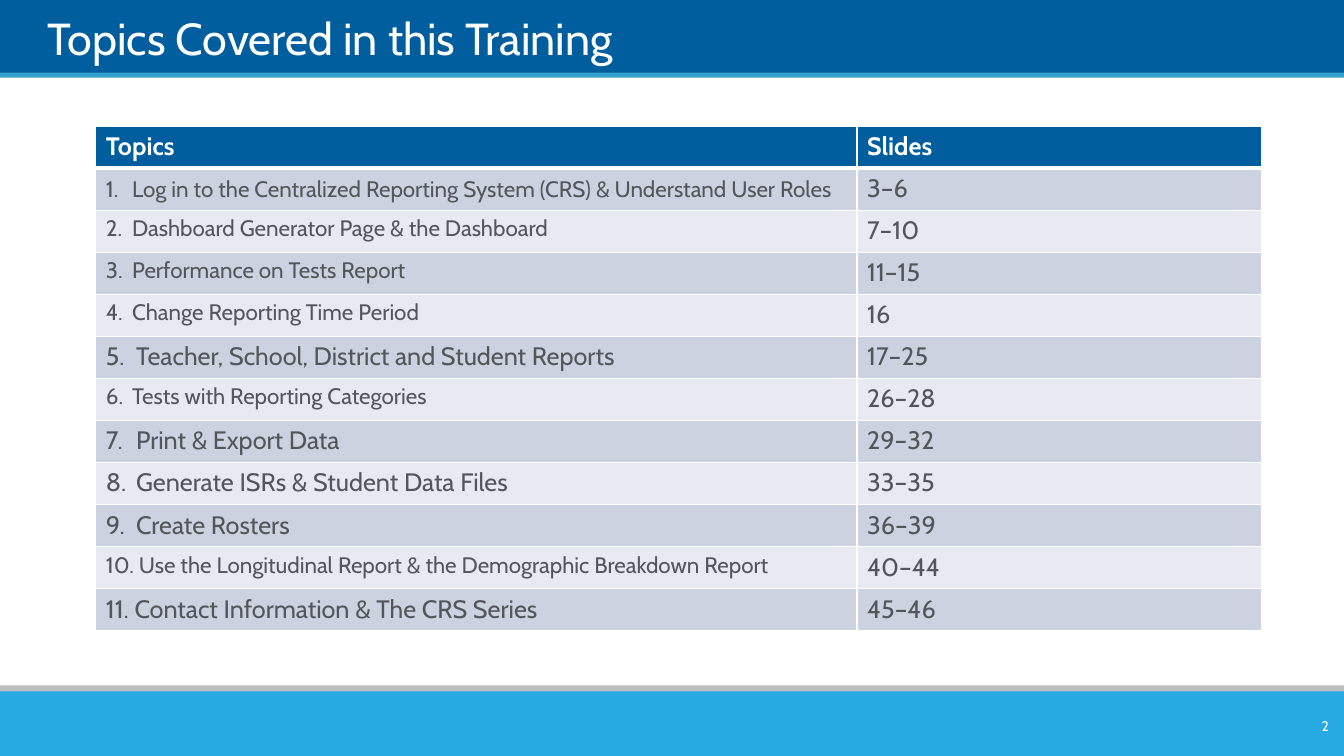
from lxml import etree
from pptx import Presentation
from pptx import util as u
from pptx.dml.color import RGBColor
from pptx.enum import shapes, text
from pptx.oxml import ns

W, H = 13.33, 7.5
FONT = "Cabin"
COLORS = {
    "navy": "005E9E", "stripe": "35A0CE", "grey": "BFBFBF", "sky": "27AAE1",
    "white": "FFFFFF", "ink": "53565A", "odd": "CCD2DF", "even": "E7EAF0",
}
TOPICS = [
    ("Log in to the Centralized Reporting System (CRS) & Understand User Roles", 16, "3–6"),
    ("Dashboard Generator Page & the Dashboard", 16, "7–10"),
    ("Performance on Tests Report", 16, "11–15"),
    ("Change Reporting Time Period", 16, "16"),
    ("Teacher, School, District and Student Reports", 18, "17–25"),
    ("Tests with Reporting Categories", 16, "26–28"),
    ("Print & Export Data", 18, "29–32"),
    ("Generate ISRs & Student Data Files", 18, "33–35"),
    ("Create Rosters", 18, "36–39"),
    ("Use the Longitudinal Report & the Demographic Breakdown Report", 16, "40–44"),
    ("Contact Information & The CRS Series", 18, "45–46"),
]


def rgb(name):
    return RGBColor.from_string(COLORS[name])


def add_run(p, words, size, color, bold=False):
    r = p.add_run()
    r.text = words
    r.font.name = FONT
    r.font.size = u.Pt(size)
    r.font.bold = bold
    r.font.color.rgb = rgb(color)


def add_bar(s, y, h, color):
    sp = s.shapes.add_shape(shapes.MSO_SHAPE.RECTANGLE, 0, u.Inches(y), u.Inches(W), u.Inches(h))
    sp.shadow.inherit = False
    sp.fill.solid()
    sp.fill.fore_color.rgb = rgb(color)
    sp.line.fill.background()


def add_header(s, y, h, title):
    stripe = 0.05
    add_bar(s, y, h - stripe / 2, "navy")
    add_bar(s, y + h - stripe, stripe, "stripe")
    sp = s.shapes.title
    sp.element.getparent().append(sp.element)
    sp.left, sp.top = u.Inches(0.47), u.Inches(y + 0.08)
    sp.width, sp.height = u.Inches(12.43), u.Inches(0.57)
    tf = sp.text_frame
    tf.margin_left = tf.margin_top = tf.margin_right = tf.margin_bottom = 0
    tf.vertical_anchor = text.MSO_ANCHOR.BOTTOM
    tf.auto_size = text.MSO_AUTO_SIZE.NONE
    p = tf.paragraphs[0]
    p.alignment = text.PP_ALIGN.LEFT
    add_run(p, title, 32, "white")


def add_footer(s, y, h, number):
    add_bar(s, y, 0.2 * h, "grey")
    add_bar(s, y + 0.06, h - 0.06, "sky")
    sp = s.shapes.add_textbox(u.Inches(W - 0.82), u.Inches(y + 0.25), u.Inches(0.77), u.Inches(0.3))
    tf = sp.text_frame
    tf.word_wrap = True
    tf.vertical_anchor = text.MSO_ANCHOR.MIDDLE
    p = tf.paragraphs[0]
    p.alignment = text.PP_ALIGN.RIGHT
    add_run(p, number, 10, "white")


def add_borders(cell, widths):
    tcPr = cell._tc.get_or_add_tcPr()
    for side, width in widths.items():
        ln = etree.SubElement(tcPr, ns.qn("a:ln" + side), w=str(u.Pt(width)))
        fill = etree.SubElement(ln, ns.qn("a:solidFill"))
        etree.SubElement(fill, ns.qn("a:srgbClr"), val=COLORS["white"])


def add_tab_stop(p, pos):
    tabs = etree.SubElement(p._p.get_or_add_pPr(), ns.qn("a:tabLst"))
    etree.SubElement(tabs, ns.qn("a:tab"), pos=str(u.Inches(pos)), algn="l")


def fill_cell(cell, words, size, color, back, bold=False, top=1, bottom=1):
    add_borders(cell, {"L": 1, "R": 1, "T": top, "B": bottom})
    cell.fill.solid()
    cell.fill.fore_color.rgb = rgb(back)
    p = cell.text_frame.paragraphs[0]
    if "\t" in words:
        add_tab_stop(p, 0.26 if size == 16 else 0.3)
    add_run(p, words, size, color, bold)


def add_topics(s, x, y, w, h):
    rows = len(TOPICS) + 1
    table = s.shapes.add_table(rows, 2, u.Inches(x), u.Inches(y), u.Inches(w), u.Inches(h)).table
    table.columns[0].width = u.Inches(7.55)
    table.columns[1].width = u.Inches(w - 7.55)
    for row in table.rows:
        row.height = u.Inches(h / rows)
    for col, words in enumerate(("Topics", "Slides")):
        fill_cell(table.cell(0, col), words, 18, "white", "navy", True, bottom=3)
    for n, (topic, size, pages) in enumerate(TOPICS, 1):
        back = "odd" if n % 2 else "even"
        top = 3 if n == 1 else 1
        gap = "\t" if n < 10 else " "
        fill_cell(table.cell(n, 0), f"{n}.{gap}{topic}", size, "ink", back, top=top)
        fill_cell(table.cell(n, 1), pages, 18, "ink", back, top=top)
    table.cell(1, 0).vertical_anchor = text.MSO_ANCHOR.MIDDLE


def main():
    prs = Presentation()
    prs.slide_width, prs.slide_height = u.Inches(W), u.Inches(H)
    s = prs.slides.add_slide(prs.slide_layouts[5])
    add_header(s, -0.01, 0.78, "Topics Covered in this Training")
    add_footer(s, 6.8, H - 6.8, "2")
    add_topics(s, 0.95, 1.25, 11.56, 5.01)
    prs.save("out.pptx")


if __name__ == "__main__":
    main()
